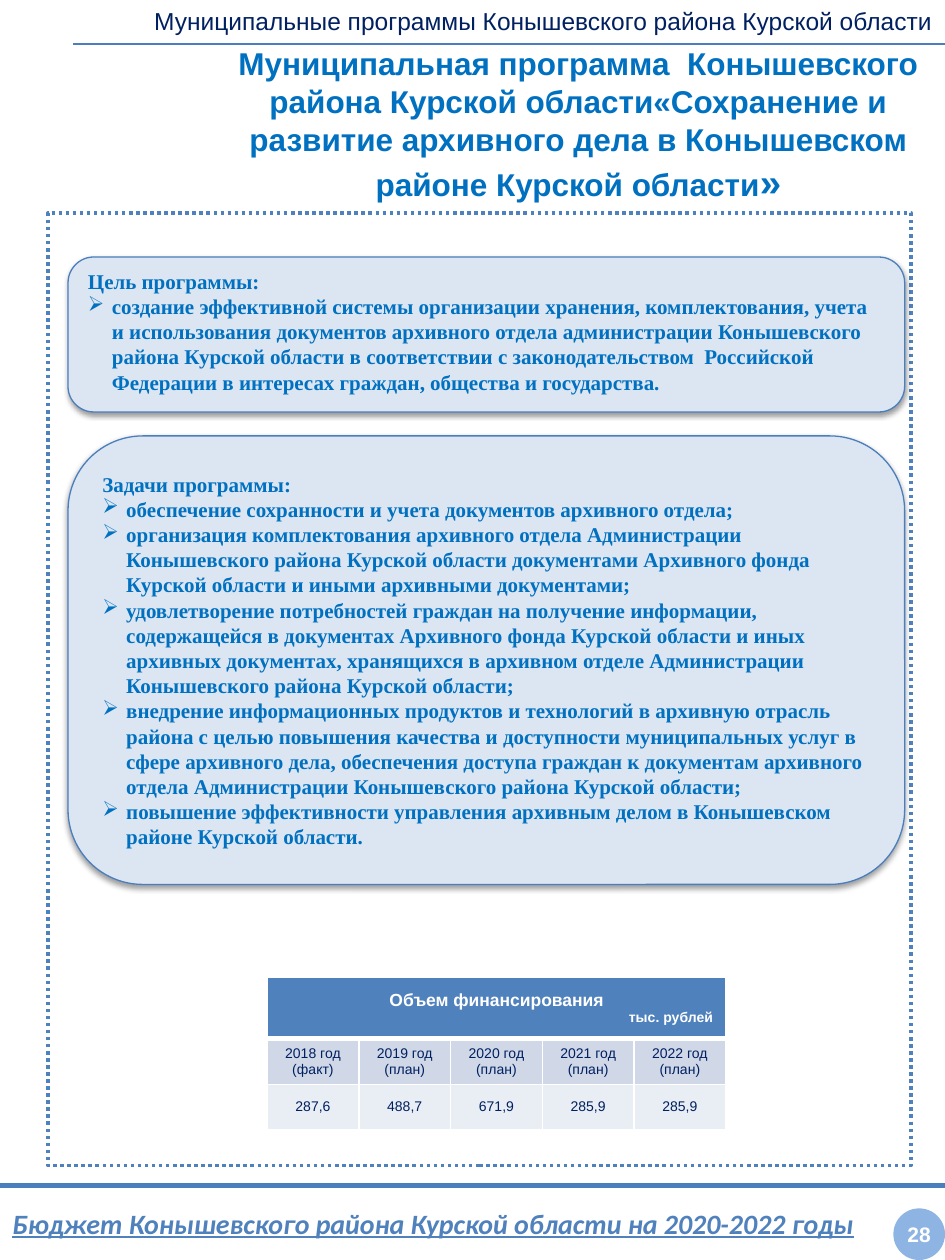
from lxml.etree import SubElement
from pptx import Presentation
from pptx.dml.color import RGBColor
from pptx.enum.dml import MSO_LINE
from pptx.enum.shapes import MSO_CONNECTOR, MSO_SHAPE
from pptx.enum.text import MSO_ANCHOR, PP_ALIGN
from pptx.oxml.ns import qn
from pptx.util import Inches, Pt

WHITE = RGBColor(0xFF, 0xFF, 0xFF)
BLUE = RGBColor(0x00, 0x70, 0xC0)
NAVY = RGBColor(0x00, 0x20, 0x60)
STEEL = RGBColor(0x4F, 0x81, 0xBD)
RULE = RGBColor(0x4B, 0x7E, 0xBC)
BADGE = RGBColor(0x8E, 0xB4, 0xE3)
PANEL = RGBColor(0xDC, 0xE6, 0xF2)
YEAR_ROW = RGBColor(0xD0, 0xD8, 0xE8)
AMOUNT_ROW = RGBColor(0xE9, 0xED, 0xF4)

GOAL = [
    "создание эффективной системы организации хранения, комплектования, учета и использования документов архивного отдела администрации Конышевского района Курской области в соответствии с законодательством  Российской Федерации в интересах граждан, общества и государства.",
]
TASKS = [
    "обеспечение сохранности и учета документов архивного отдела;",
    "организация комплектования архивного отдела Администрации Конышевского района Курской области документами Архивного фонда Курской области и иными архивными документами;",
    "удовлетворение потребностей граждан на получение информации, содержащейся в документах Архивного фонда Курской области и иных архивных документах, хранящихся в архивном отделе Администрации Конышевского района Курской области;",
    "внедрение информационных продуктов и технологий в архивную отрасль района с целью повышения качества и доступности муниципальных услуг в сфере архивного дела, обеспечения доступа граждан к документам архивного отдела Администрации Конышевского района Курской области;",
    "повышение эффективности управления архивным делом в Конышевском районе Курской области.",
]
FUNDING = [
    (["2018 год", "(факт)"], "287,6"),
    (["2019 год (план)"], "488,7"),
    (["2020 год (план)"], "671,9"),
    (["2021 год (план)"], "285,9"),
    (["2022 год (план)"], "285,9"),
]


class ProgrammeSlide:
    def __init__(self, slide):
        self.shapes = slide.shapes

    def style(self, paragraph, size, color, bold=False, font="Arial", align=PP_ALIGN.LEFT):
        paragraph.alignment = align
        paragraph.font.name = font
        paragraph.font.size = Pt(size)
        paragraph.font.bold = bold
        paragraph.font.color.rgb = color

    def text(self, area, wording, size, color, anchor=MSO_ANCHOR.MIDDLE, **style):
        frame = self.shapes.add_textbox(*map(Inches, area)).text_frame
        frame.word_wrap = True
        frame.vertical_anchor = anchor
        paragraph = frame.paragraphs[0]
        paragraph.add_run().text = wording
        self.style(paragraph, size, color, **style)
        return paragraph

    def rule(self, left, top, right, width):
        line = self.shapes.add_connector(
            MSO_CONNECTOR.STRAIGHT, *map(Inches, (left, top, right, top)))
        line.line.color.rgb = RULE
        line.line.width = Pt(width)
        SubElement(line._element.spPr, qn("a:effectLst"))

    def shape(self, kind, area, fill, outline=None, width=0.75):
        shape = self.shapes.add_shape(kind, *map(Inches, area))
        shape.shadow.inherit = False
        shape.fill.solid()
        shape.fill.fore_color.rgb = fill
        if outline is None:
            shape.line.fill.background()
        else:
            shape.line.color.rgb = outline
            shape.line.width = Pt(width)
        return shape

    def panel(self, area, heading, items, bottom_inset=0.05):
        """Shadowed rounded box with a heading and arrow bullets."""
        box = self.shape(MSO_SHAPE.ROUNDED_RECTANGLE, area, PANEL, RULE)
        effects = box._element.spPr.find(qn("a:effectLst"))
        shadow = SubElement(effects, qn("a:outerShdw"), blurRad=str(Pt(3.1)),
                            dist=str(Pt(1.6)), dir="5400000", rotWithShape="0")
        black = SubElement(shadow, qn("a:srgbClr"), val="000000")
        SubElement(black, qn("a:alpha"), val="38000")

        frame = box.text_frame
        frame.word_wrap = True
        frame.vertical_anchor = MSO_ANCHOR.MIDDLE
        frame.margin_bottom = Inches(bottom_inset)
        frame.text = "\n".join([heading, *items])
        for index, paragraph in enumerate(frame.paragraphs):
            if index:
                props = paragraph._p.get_or_add_pPr()
                props.set("marL", str(Inches(0.19)))
                props.set("indent", str(-Inches(0.19)))
                SubElement(props, qn("a:buFont"), typeface="Wingdings")
                SubElement(props, qn("a:buChar"), char="Ø")
            self.style(paragraph, 12, BLUE, bold=True, font="Times New Roman")

    def cell(self, cell, lines, fill, color=NAVY):
        cell.fill.solid()
        cell.fill.fore_color.rgb = fill
        cell.vertical_anchor = MSO_ANCHOR.MIDDLE
        cell.text = "\n".join(lines)
        for paragraph in cell.text_frame.paragraphs:
            self.style(paragraph, 8, color, align=PP_ALIGN.CENTER)

    def borders(self, cell, bottom=1):
        props = cell._tc.get_or_add_tcPr()
        widths = {"a:lnL": 1, "a:lnR": 1, "a:lnT": 1, "a:lnB": bottom}
        for position, (side, width) in enumerate(widths.items()):
            line = props.makeelement(qn(side), {"w": str(Pt(width))})
            props.insert(position, line)
            fill = SubElement(line, qn("a:solidFill"))
            SubElement(fill, qn("a:srgbClr"), val=str(WHITE))

    def funding_table(self, area, row_heights):
        table = self.shapes.add_table(3, len(FUNDING), *map(Inches, area)).table
        for row, height in zip(table.rows, row_heights):
            row.height = Inches(height)
        title = table.cell(0, 0)
        title.merge(table.cell(0, len(FUNDING) - 1))
        self.cell(title, ["Объем финансирования", "тыс. рублей"], STEEL, WHITE)
        heading, unit = title.text_frame.paragraphs
        self.style(heading, 10, WHITE, bold=True, align=PP_ALIGN.CENTER)
        self.style(unit, 8, WHITE, bold=True, align=PP_ALIGN.RIGHT)
        for column, (year, amount) in enumerate(FUNDING):
            self.cell(table.cell(1, column), year, YEAR_ROW)
            self.cell(table.cell(2, column), [amount], AMOUNT_ROW)
            self.borders(table.cell(0, column), bottom=3)
            self.borders(table.cell(1, column))
            self.borders(table.cell(2, column))


def main():
    deck = Presentation()
    deck.slide_width, deck.slide_height = Inches(7.5), Inches(10)
    page = ProgrammeSlide(deck.slides.add_slide(deck.slide_layouts[6]))

    title = page.text(
        (1.68, 0.35, 5.82, 1.27),
        "Муниципальная программа  Конышевского района Курской области"
        "«Сохранение и развитие архивного дела в Конышевском районе Курской области",
        18, BLUE, bold=True, align=PP_ALIGN.CENTER)
    closing_quote = title.add_run()
    closing_quote.text = "»"
    closing_quote.font.size = Pt(22)

    footer = page.text((0, 9.41, 7.5, 0.59),
                       "Бюджет Конышевского района Курской области на 2020-2022 годы",
                       16, STEEL, bold=True, font="Calibri")
    footer.font.italic = True
    footer.font.underline = True
    page.rule(0, 9.41, 7.5, 3)

    badge = page.shape(MSO_SHAPE.OVAL, (7.09, 9.59, 0.41, 0.41), BADGE).text_frame
    badge.margin_left = badge.margin_right = Inches(0.04)
    badge.word_wrap = False
    badge.vertical_anchor = MSO_ANCHOR.MIDDLE
    badge.text = "28"
    page.style(badge.paragraphs[0], 12, WHITE, bold=True, align=PP_ALIGN.CENTER)

    page.rule(0.58, 0.35, 7.5, 0.75)
    frame = page.shape(MSO_SHAPE.RECTANGLE, (0.38, 1.69, 6.85, 7.56), WHITE, STEEL, 2)
    frame.line.dash_style = MSO_LINE.ROUND_DOT
    page.text((0.38, 0, 7.12, 0.34),
              "Муниципальные программы Конышевского района Курской области",
              14, NAVY, anchor=MSO_ANCHOR.TOP, align=PP_ALIGN.RIGHT)
    page.funding_table((2.12, 7.76, 3.64, 1.2), (0.48, 0.36, 0.36))
    page.panel((0.54, 2.04, 6.64, 1.23), "Цель программы:", GOAL, bottom_inset=0.1)
    page.panel((0.54, 3.46, 6.64, 3.56), "Задачи программы:", TASKS)
    deck.save("out.pptx")


if __name__ == "__main__":
    main()
